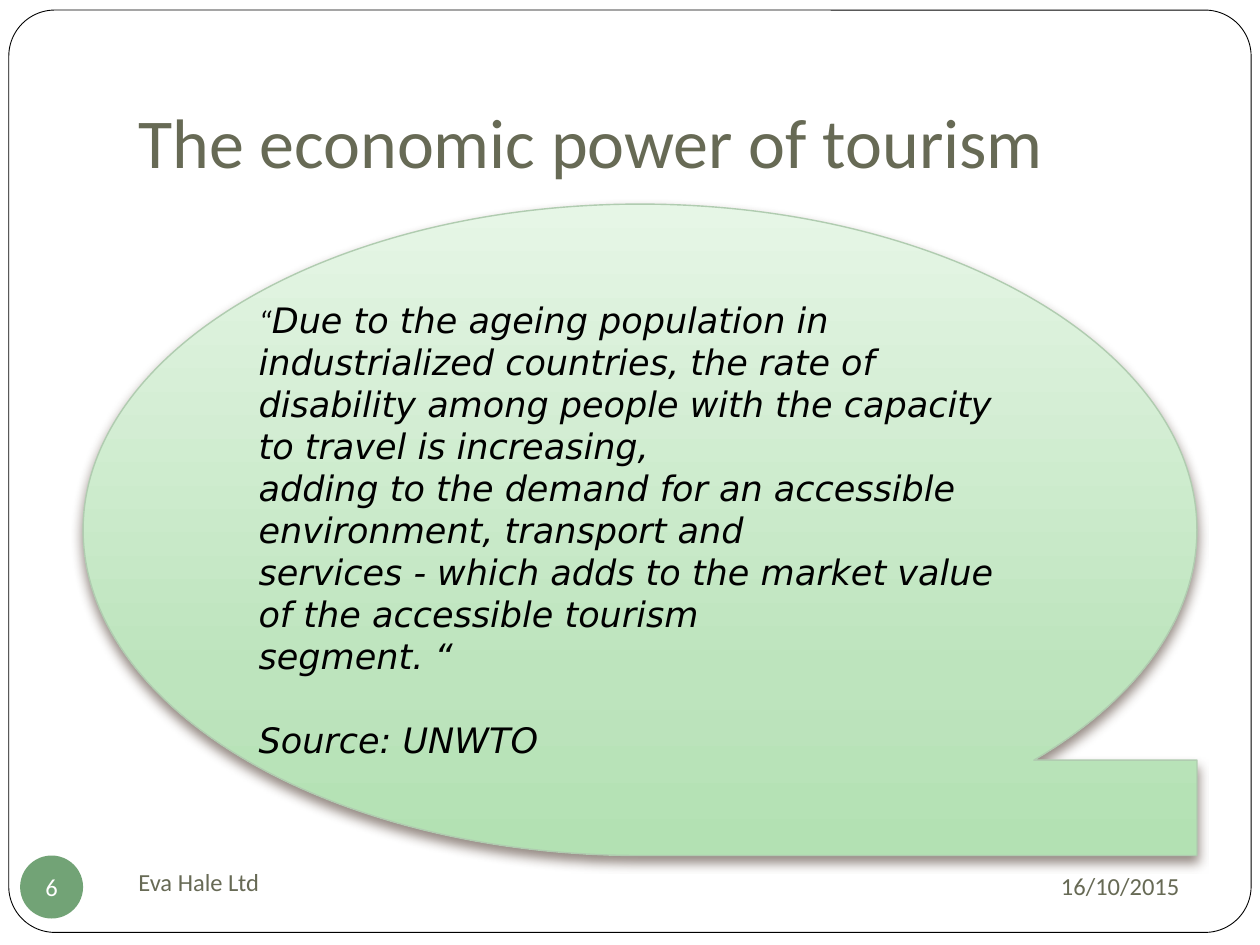
from dataclasses import dataclass
from typing import Optional

from lxml.etree import SubElement
from pptx import Presentation
from pptx.dml.color import RGBColor
from pptx.enum.shapes import MSO_SHAPE as Preset
from pptx.enum.text import MSO_ANCHOR as Anchor, PP_ALIGN as Align
from pptx.oxml.ns import qn
from pptx.util import Inches, Pt

COLORS = {
    "paper": "FFFFFF",
    "ink": "000000",
    "heading": "676A55",
    "badge": "72A376",
    "bubble_line": "B0CCB0",
    "shadow": "4E3B30",
}
BUBBLE_STOPS = [(0, "E6F6E6"), (72, "BDE4BD"), (100, "B3E1B3")]
QUOTE_LINES = [
    "Due to the ageing population in industrialized countries, the rate of",
    "disability among people with the capacity to travel is increasing,",
    "adding to the demand for an accessible environment, transport and",
    "services - which adds to the market value of the accessible tourism",
    "segment. “",
]


@dataclass(frozen=True)
class Box:
    left: float
    top: float
    width: float
    height: float

    def lengths(self):
        return [Inches(n) for n in (self.left, self.top, self.width, self.height)]


@dataclass(frozen=True)
class Style:
    size: float
    color: str = "heading"
    font: str = "Calibri"
    italic: bool = False


@dataclass(frozen=True)
class Label:
    text: str
    box: Box
    style: Style
    anchor: Anchor = Anchor.MIDDLE
    align: Align = Align.LEFT
    bottom_inset: float = 0.05


SMALL = Style(14)
QUOTE = Style(20, "ink", "DejaVu Sans", True)
QUOTE_MARK = Style(18, "ink", italic=True)

LABELS = [
    Label("The economic power of tourism", Box(1, 0.3, 8.5, 1.25), Style(40),
          Anchor.BOTTOM, bottom_inset=0.1),
    Label("16/10/2015", Box(6.75, 6.77, 2.71, 0.52), SMALL, align=Align.RIGHT),
    Label("Eva Hale Ltd", Box(1, 6.75, 4.33, 0.5), SMALL),
]


def rgb(name: str) -> RGBColor:
    return RGBColor.from_string(COLORS[name])


def add_run(paragraph, text: str, style: Style) -> None:
    run = paragraph.add_run()
    run.text = text
    run.font.size = Pt(style.size)
    run.font.name = style.font
    run.font.italic = style.italic
    run.font.color.rgb = rgb(style.color)


def add_label(slide, label: Label) -> None:
    frame = slide.shapes.add_textbox(*label.box.lengths()).text_frame
    frame.word_wrap = True
    frame.vertical_anchor = label.anchor
    frame.margin_bottom = Inches(label.bottom_inset)
    paragraph = frame.paragraphs[0]
    paragraph.alignment = label.align
    add_run(paragraph, label.text, label.style)


def add_preset(slide, preset: Preset, box: Box, fill: Optional[str] = None,
               line: Optional[str] = None, line_width: float = 0.5):
    shape = slide.shapes.add_shape(preset, *box.lengths())
    shape.shadow.inherit = False
    if fill:
        shape.fill.solid()
        shape.fill.fore_color.rgb = rgb(fill)
    if line:
        shape.line.color.rgb = rgb(line)
        shape.line.width = Pt(line_width)
    else:
        shape.line.fill.background()
    return shape


def set_gradient(shape, stops: list[tuple[int, str]]) -> None:
    shape.fill.gradient()
    shape.fill.gradient_angle = 270
    stop_list = shape._element.spPr.find(qn("a:gradFill")).find(qn("a:gsLst"))
    for stop in list(stop_list):
        stop_list.remove(stop)
    for position, color in stops:
        stop = SubElement(stop_list, qn("a:gs"), pos=str(position * 1000))
        SubElement(stop, qn("a:srgbClr"), val=color)


def set_shadow(shape, color: str, opacity: int, blur: float, distance: float) -> None:
    effects = shape._element.spPr.find(qn("a:effectLst"))
    shadow = SubElement(effects, qn("a:outerShdw"), blurRad=str(Pt(blur)),
                        dist=str(Pt(distance)), dir="5400000", rotWithShape="0")
    tint = SubElement(shadow, qn("a:srgbClr"), val=COLORS[color])
    SubElement(tint, qn("a:alpha"), val=str(opacity * 1000))


def add_badge(slide, number: str) -> None:
    badge = add_preset(slide, Preset.OVAL, Box(0.16, 6.79, 0.5, 0.5), "badge")
    frame = badge.text_frame
    frame.word_wrap = False
    frame.vertical_anchor = Anchor.MIDDLE
    frame.margin_left = frame.margin_right = 0
    frame.margin_top = frame.margin_bottom = 0
    paragraph = frame.paragraphs[0]
    paragraph.alignment = Align.CENTER
    add_run(paragraph, number, Style(14, "paper"))


def add_quote(slide, lines: list[str], source: str) -> None:
    bubble = add_preset(slide, Preset.FLOWCHART_SEQUENTIAL_ACCESS_STORAGE,
                        Box(0.66, 1.62, 8.84, 5.17), line="bubble_line",
                        line_width=0.79)
    set_gradient(bubble, BUBBLE_STOPS)
    set_shadow(bubble, "shadow", 60, 6, 4)
    frame = bubble.text_frame
    frame.word_wrap = True
    frame.vertical_anchor = Anchor.MIDDLE
    paragraph = frame.paragraphs[0]
    add_run(paragraph, "“", QUOTE_MARK)
    add_run(paragraph, lines[0], QUOTE)
    for line in lines[1:] + [source]:
        paragraph = frame.add_paragraph()
        add_run(paragraph, line, QUOTE)
    paragraph.space_before = Pt(24)
    for paragraph in frame.paragraphs:
        paragraph.alignment = Align.LEFT


def main() -> None:
    presentation = Presentation()
    presentation.slide_width = Inches(10)
    presentation.slide_height = Inches(7.5)
    slide = presentation.slides.add_slide(presentation.slide_layouts[6])
    border = add_preset(slide, Preset.ROUNDED_RECTANGLE,
                        Box(0.07, 0.08, 9.86, 7.32), "paper", "ink")
    border.adjustments[0] = 0.05
    for label in LABELS:
        add_label(slide, label)
    add_badge(slide, "6")
    add_quote(slide, QUOTE_LINES, "Source: UNWTO")
    presentation.save("out.pptx")


if __name__ == "__main__":
    main()
